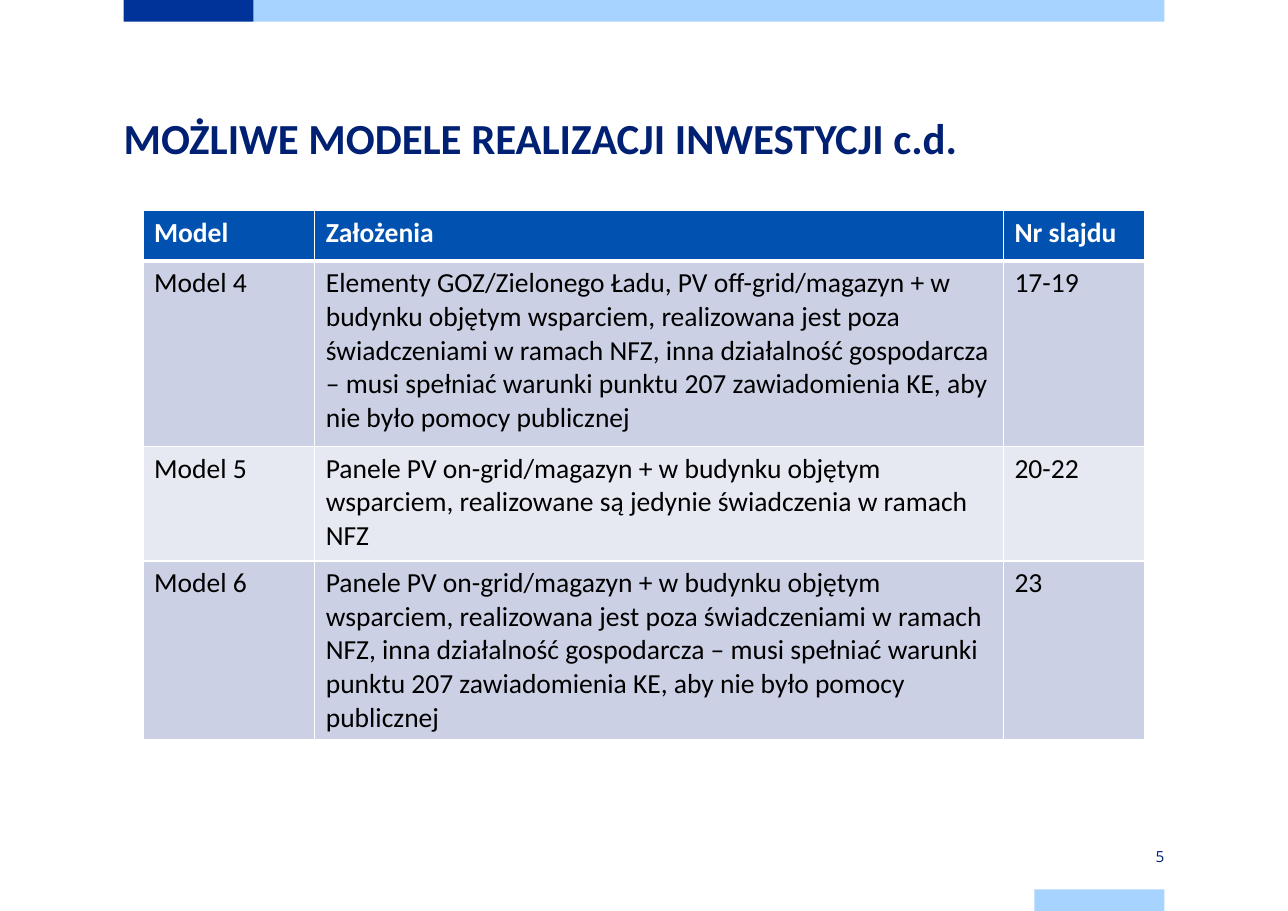
import dataclasses

import pptx
import pptx.dml.color
import pptx.enum.shapes
import pptx.enum.text
import pptx.oxml
import pptx.oxml.ns
import pptx.util

Cm = pptx.util.Cm
Pt = pptx.util.Pt
Align = pptx.enum.text.PP_ALIGN
Anchor = pptx.enum.text.MSO_ANCHOR


@dataclasses.dataclass(frozen=True)
class Theme:
    navy: str = "002073"
    blue: str = "003399"
    sky: str = "A6D3FF"
    header: str = "0051B0"
    bands: tuple = ("CCD0E4", "E7E9F2")
    white: str = "FFFFFF"
    black: str = "000000"
    font: str = "Calibri"
    number_font: str = "Open Sans"
    title_size: int = 28
    table_size: int = 18
    number_size: int = 10


THEME = Theme()
PAGE_W, PAGE_H = 29.7, 21
LEFT, CONTENT_W = 2.85, 24
BAR_W, BAR_H = 3, 0.5

COLUMNS = (3.96, 15.88, 3.25)
ROWS = (
    (1.17, ("Model", "Założenia", "Nr slajdu")),
    (4.27, ("Model 4",
            "Elementy GOZ/Zielonego Ładu, PV off-grid/magazyn + w budynku objętym "
            "wsparciem, realizowana jest poza świadczeniami w ramach NFZ, inna "
            "działalność gospodarcza – musi spełniać warunki punktu 207 "
            "zawiadomienia KE, aby nie było pomocy publicznej",
            "17-19")),
    (2.64, ("Model 5",
            "Panele PV on-grid/magazyn + w budynku objętym wsparciem, "
            "realizowane są jedynie świadczenia w ramach NFZ",
            "20-22")),
    (4.12, ("Model 6",
            "Panele PV on-grid/magazyn + w budynku objętym wsparciem, "
            "realizowana jest poza świadczeniami w ramach NFZ, inna działalność "
            "gospodarcza – musi spełniać warunki punktu 207 zawiadomienia KE, "
            "aby nie było pomocy publicznej",
            "23")),
)


def rgb(color):
    return pptx.dml.color.RGBColor.from_string(color)


def set_font(p, name, size, color, bold=False):
    p.font.name = name
    p.font.size = Pt(size)
    p.font.bold = bold
    p.font.color.rgb = rgb(color)


def set_frame(tf, anchor, margin_y=0):
    tf.word_wrap = True
    tf.auto_size = pptx.enum.text.MSO_AUTO_SIZE.NONE
    tf.vertical_anchor = anchor
    tf.margin_left = tf.margin_right = 0
    tf.margin_top = tf.margin_bottom = Cm(margin_y)


def add_bar(s, x, y, w, h, color):
    sp = s.shapes.add_shape(pptx.enum.shapes.MSO_SHAPE.RECTANGLE,
                            Cm(x), Cm(y), Cm(w), Cm(h))
    sp.shadow.inherit = False
    sp.fill.solid()
    sp.fill.fore_color.rgb = rgb(color)
    sp.line.fill.background()


def add_bars(s, x, w):
    add_bar(s, x, 0, BAR_W, BAR_H, THEME.blue)
    add_bar(s, x + BAR_W, 0, w - BAR_W, BAR_H, THEME.sky)
    add_bar(s, x + w - BAR_W, PAGE_H - BAR_H, BAR_W, BAR_H, THEME.sky)


def add_title(s, x, y, w, h, text):
    sp = s.shapes.title
    sp.left, sp.top, sp.width, sp.height = Cm(x), Cm(y), Cm(w), Cm(h)
    set_frame(sp.text_frame, Anchor.TOP)
    p = sp.text_frame.paragraphs[0]
    p.text = text
    p.alignment = Align.LEFT
    p.line_spacing = Pt(36)
    set_font(p, THEME.font, THEME.title_size, THEME.navy, True)


def set_borders(cell, top, bottom):
    tc_pr = cell._tc.get_or_add_tcPr()
    for side, width in (("L", 1), ("R", 1), ("T", top), ("B", bottom)):
        tc_pr.append(pptx.oxml.parse_xml(
            f'<a:ln{side} {pptx.oxml.ns.nsdecls("a")} w="{Pt(width)}">'
            f'<a:solidFill><a:srgbClr val="{THEME.white}"/></a:solidFill>'
            f'</a:ln{side}>'))


def add_models_table(s, x, y):
    height = sum(h for h, _ in ROWS)
    table = s.shapes.add_table(len(ROWS), len(COLUMNS), Cm(x), Cm(y),
                               Cm(sum(COLUMNS)), Cm(height)).table
    for column, width in zip(table.columns, COLUMNS):
        column.width = Cm(width)
    for i, (row_h, texts) in enumerate(ROWS):
        table.rows[i].height = Cm(row_h)
        is_header = i == 0
        fill = THEME.header if is_header else THEME.bands[(i - 1) % 2]
        color = THEME.white if is_header else THEME.black
        for j, text in enumerate(texts):
            cell = table.cell(i, j)
            # A thick rule separates the header from the body
            set_borders(cell, 3 if i == 1 else 1, 3 if is_header else 1)
            cell.fill.solid()
            cell.fill.fore_color.rgb = rgb(fill)
            p = cell.text_frame.paragraphs[0]
            p.text = text
            set_font(p, THEME.font, THEME.table_size, color, is_header)


def add_page_number(s, x, y, w, h, number):
    tf = s.shapes.add_textbox(Cm(x), Cm(y), Cm(w), Cm(h)).text_frame
    set_frame(tf, Anchor.MIDDLE, 0.2)
    p = tf.paragraphs[0]
    p.text = str(number)
    p.alignment = Align.RIGHT
    set_font(p, THEME.number_font, THEME.number_size, THEME.navy)


def main():
    prs = pptx.Presentation()
    prs.slide_width, prs.slide_height = Cm(PAGE_W), Cm(PAGE_H)
    s = prs.slides.add_slide(prs.slide_layouts.get_by_name("Title Only"))

    # Decorative bars at the top and bottom
    add_bars(s, LEFT, CONTENT_W)
    # Title and table of models
    add_title(s, LEFT, 2.5, CONTENT_W, 3, "MOŻLIWE MODELE REALIZACJI INWESTYCJI c.d.")
    add_models_table(s, LEFT + 0.45, 4.85)
    # Page number above the bottom bar
    add_page_number(s, LEFT + CONTENT_W - BAR_W, 19.5, BAR_W, 0.5, 5)

    prs.save("out.pptx")


if __name__ == "__main__":
    main()
